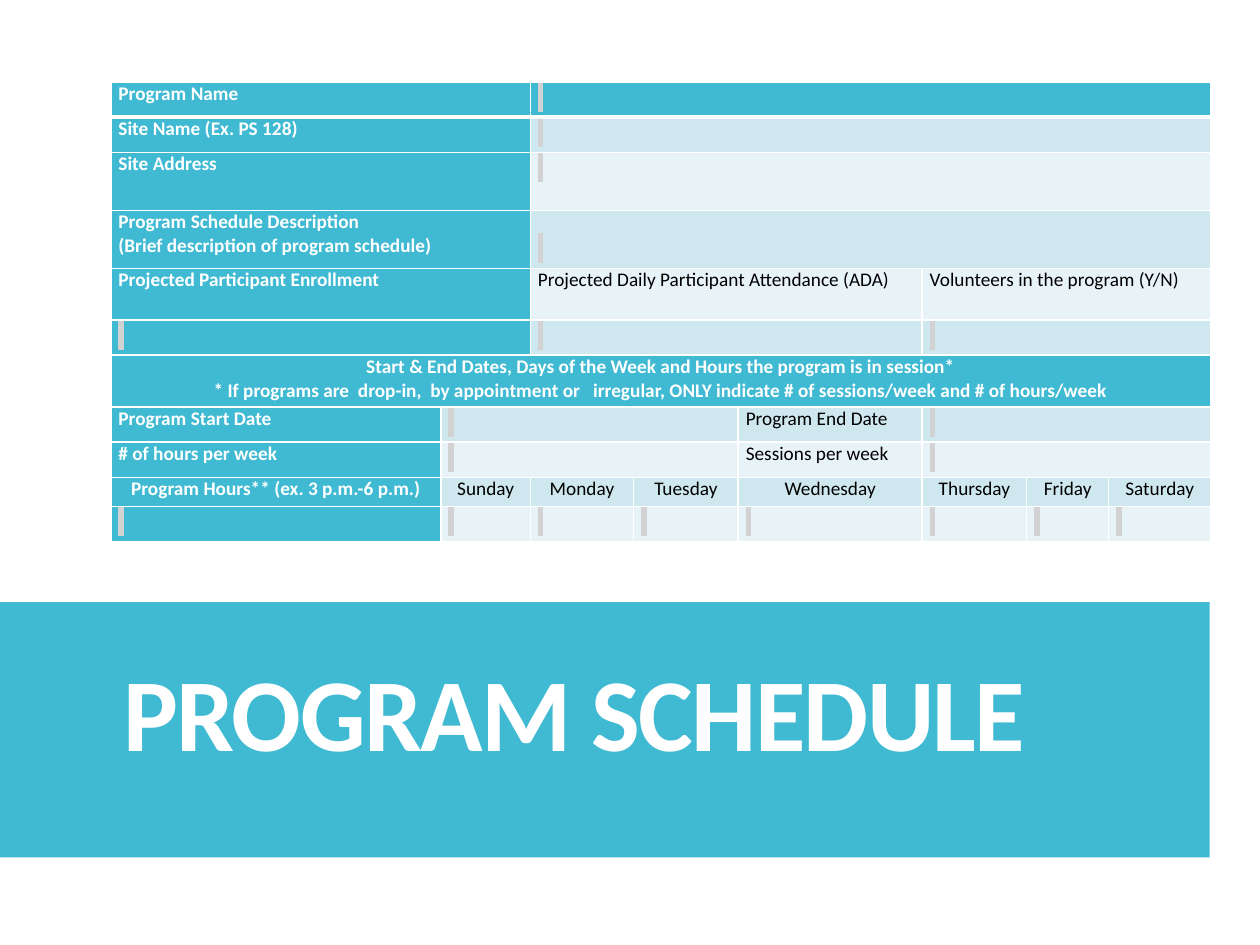
from lxml.etree import SubElement
from pptx import Presentation
from pptx.dml.color import RGBColor
from pptx.enum.shapes import MSO_SHAPE
from pptx.enum.text import MSO_ANCHOR, PP_ALIGN
from pptx.oxml.ns import qn
from pptx.util import Inches, Pt

TEAL = RGBColor(0x40, 0xBA, 0xD2)
BANDS = [RGBColor(0xE8, 0xF3, 0xF7), RGBColor(0xCF, 0xE7, 0xEE)]
GREY = RGBColor(0xD2, 0xD2, 0xD2)
WHITE = RGBColor(0xFF, 0xFF, 0xFF)
BLACK = RGBColor(0, 0, 0)
FONT = "Calibri"

WIDTH, HEIGHT = 10, 7.5
LEFT, TOP = 0.88, 0.65
COLUMNS = [2.62, 0.71, 0.82, 0.83, 1.46, 0.83, 0.65, 0.81]
ROWS = [0.28, 0.28, 0.46, 0.46, 0.41, 0.28, 0.41, 0.28, 0.28, 0.23, 0.28]
INSET = 0.06
LINE = 0.18
FIELD = " "  # a cell to be filled in, marked by a highlighted space
HEADER_ROWS = (0, 6)
CENTERED_ROWS = (6, 9)
SECOND_LINE_ROW = 3  # its field stands level with the second line

# Each row lists (columns spanned, content)
SCHEDULE = [
    [(2, "Program Name"), (6, FIELD)],
    [(2, "Site Name (Ex. PS 128)"), (6, FIELD)],
    [(2, "Site Address"), (6, FIELD)],
    [(2, "Program Schedule Description\n(Brief description of program schedule)"), (6, FIELD)],
    [(2, "Projected Participant Enrollment"),
     (3, "Projected Daily Participant Attendance (ADA)"),
     (3, "Volunteers in the program (Y/N)")],
    [(2, FIELD), (3, FIELD), (3, FIELD)],
    [(8, "Start & End Dates, Days of the Week and Hours the program is in session*\n"
         "* If programs are  drop-in,  by appointment or   irregular, "
         "ONLY indicate # of sessions/week and # of hours/week")],
    [(1, "Program Start Date"), (3, FIELD), (1, "Program End Date"), (3, FIELD)],
    [(1, "# of hours per week"), (3, FIELD), (1, "Sessions per week"), (3, FIELD)],
    [(1, text) for text in ("Program Hours** (ex. 3 p.m.-6 p.m.)", "Sunday", "Monday", "Tuesday",
                            "Wednesday", "Thursday", "Friday", "Saturday")],
    [(1, FIELD)] * 8,
]


def add_band(page, left, top, width, height):
    band = page.shapes.add_shape(MSO_SHAPE.RECTANGLE, Inches(left), Inches(top),
                                 Inches(width), Inches(height))
    band.shadow.inherit = False
    band.fill.solid()
    band.fill.fore_color.rgb = TEAL
    band.line.fill.background()


def add_title(page, text):
    box = page.shapes.add_textbox(Inches(LEFT), Inches(5.02), Inches(8.38), Inches(1.17))
    frame = box.text_frame
    frame.word_wrap = True
    frame.vertical_anchor = MSO_ANCHOR.BOTTOM
    frame.text = text
    para = frame.paragraphs[0]
    para.line_spacing = 0.9
    para.space_after = Pt(6)
    span = para.runs[0]
    style_font(span.font, 59, WHITE, True)
    span.font._element.set("spc", "-100")


def style_font(font, size, color, bold):
    font.name = FONT
    font.size = Pt(size)
    font.bold = bold
    font.color.rgb = color


def set_borders(cell, row):
    properties = cell._tc.get_or_add_tcPr()
    for side in "LRTB":
        thick = (row, side) in ((0, "B"), (1, "T"))
        line = SubElement(properties, qn(f"a:ln{side}"), w=str(Pt(3 if thick else 1)))
        fill = SubElement(line, qn("a:solidFill"))
        SubElement(fill, qn("a:srgbClr"), val=str(WHITE))


def style_cell(cell, row, color):
    set_borders(cell, row)
    cell.fill.solid()
    cell.fill.fore_color.rgb = color
    cell.margin_left = cell.margin_right = Inches(INSET)
    cell.margin_top = cell.margin_bottom = 0
    # Merged-over cells stay empty and must not stretch the row
    cell.text_frame.paragraphs[0]._p.get_or_add_endParaRPr().set("sz", "1100")


def write_label(cell, text, labelled, centered):
    cell.text_frame.text = text
    for para in cell.text_frame.paragraphs:
        para.alignment = PP_ALIGN.CENTER if centered else PP_ALIGN.LEFT
        for span in para.runs:
            style_font(span.font, 11, WHITE if labelled else BLACK, labelled)


def write_field(cell, drop):
    cell.margin_top = Inches(drop)
    cell.text_frame.text = FIELD
    font = cell.text_frame.paragraphs[0].runs[0].font
    font.size = Pt(14)
    font.color.rgb = BLACK
    # Letter spacing widens the highlighted space into a square
    properties = font._element
    properties.set("spc", "1260")
    highlight = SubElement(properties, qn("a:highlight"))
    SubElement(highlight, qn("a:srgbClr"), val=str(GREY))
    font.name = FONT


def add_schedule(page):
    table = page.shapes.add_table(len(ROWS), len(COLUMNS), Inches(LEFT), Inches(TOP),
                                  Inches(sum(COLUMNS)), Inches(sum(ROWS))).table
    table.first_row = table.horz_banding = False
    for column, width in zip(table.columns, COLUMNS):
        column.width = Inches(width)
    for table_row, height in zip(table.rows, ROWS):
        table_row.height = Inches(height)

    for row, entries in enumerate(SCHEDULE):
        start = 0
        for count, content in entries:
            labelled = start == 0
            color = TEAL if labelled or row in HEADER_ROWS else BANDS[row % 2]
            for column in range(start, start + count):
                style_cell(table.cell(row, column), row, color)
            cell = table.cell(row, start)
            if count > 1:
                cell.merge(table.cell(row, start + count - 1))
            if content == FIELD:
                write_field(cell, LINE if row == SECOND_LINE_ROW else 0)
            else:
                write_label(cell, content, labelled, row in CENTERED_ROWS)
            start += count


def main():
    deck = Presentation()
    deck.slide_width, deck.slide_height = Inches(WIDTH), Inches(HEIGHT)
    page = deck.slides.add_slide(deck.slide_layouts[6])

    # Title band
    add_band(page, 0, 4.78, WIDTH * 0.96, HEIGHT * 0.27)
    add_title(page, "PROGRAM SCHEDULE")

    # Form table with its entry fields
    add_schedule(page)

    deck.save("out.pptx")


if __name__ == "__main__":
    main()
